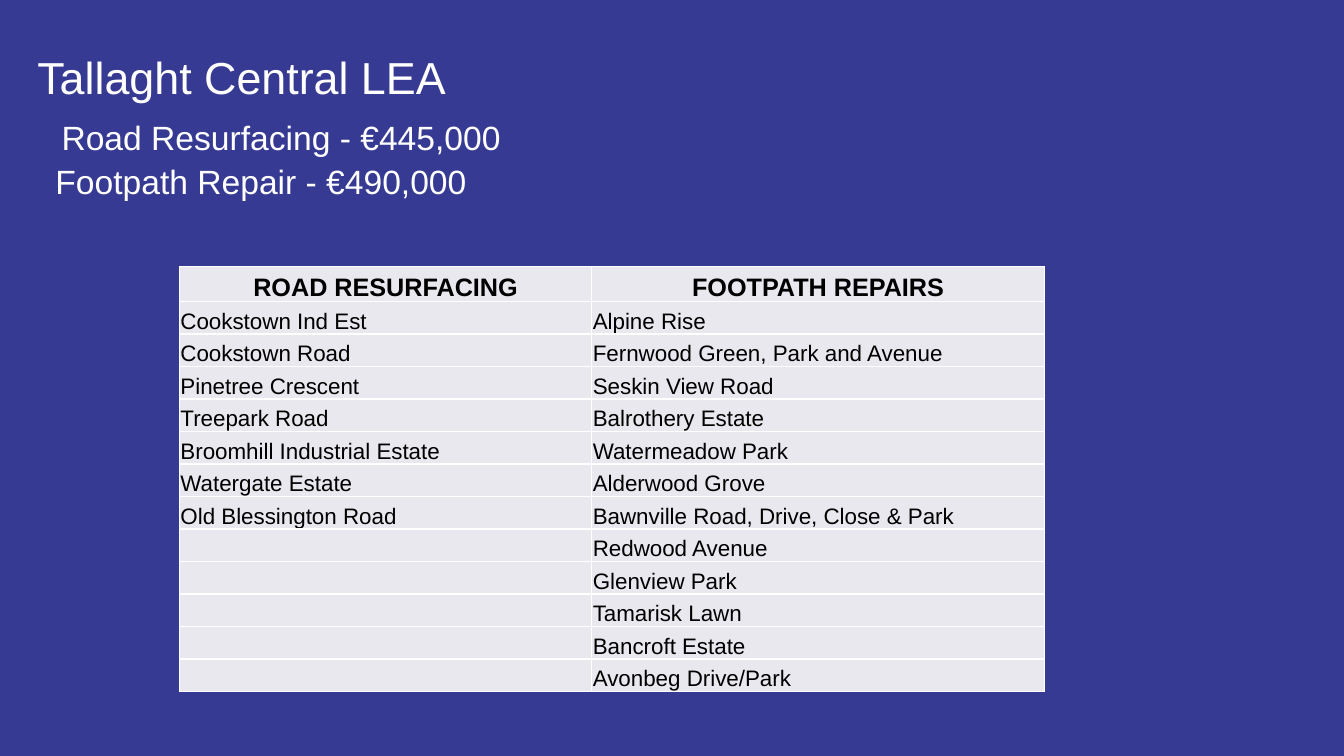
import pptx
import pptx.util
import pptx.dml.color
import pptx.enum.text
import pptx.oxml
from lxml import etree

Inches = pptx.util.Inches
Pt = pptx.util.Pt
Align = pptx.enum.text.PP_ALIGN
Anchor = pptx.enum.text.MSO_ANCHOR

HUES = {"back": "363A92", "white": "FFFFFF", "black": "000000", "cell": "E8E8EE"}


def hue(name):
    return pptx.dml.color.RGBColor.from_string(HUES[name])


def style(para, size, name, bold=False):
    para.font.name = "Arial"
    para.font.size = Pt(size)
    para.font.bold = bold
    para.font.color.rgb = hue(name)


deck = pptx.Presentation()
deck.slide_width = Inches(13.33)
deck.slide_height = Inches(7.5)
slide = deck.slides.add_slide(deck.slide_layouts[5])
slide.background.fill.solid()
slide.background.fill.fore_color.rgb = hue("back")

title = slide.shapes.title
title.left, title.top = Inches(0.37), Inches(0.44)
title.width, title.height = Inches(7.24), Inches(1.73)
frame = title.text_frame
frame.margin_left = frame.margin_right = frame.margin_bottom = 0
frame.margin_top = Inches(0.05)
frame.vertical_anchor = Anchor.TOP
frame.auto_size = pptx.enum.text.MSO_AUTO_SIZE.NONE
frame.word_wrap = True

lines = [
    ("Tallaght Central LEA", 32, 0, 0),
    ("Road Resurfacing - €445,000", 24, 0.24, 10),
    ("Footpath Repair - €490,000", 24, 0.18, 2.4),
]
frame.text = "\n".join(line[0] for line in lines)
for para, (text, size, indent, gap) in zip(frame.paragraphs, lines):
    props = para._p.get_or_add_pPr()
    props.set("marL", str(Inches(indent)))
    props.set("indent", "0")
    para.alignment = Align.LEFT
    para.line_spacing = 1.0
    para.space_before = Pt(gap)
    style(para, size, "white")

roads = [
    "ROAD RESURFACING", "Cookstown Ind Est", "Cookstown Road",
    "Pinetree Crescent", "Treepark Road", "Broomhill Industrial Estate",
    "Watergate Estate", "Old Blessington Road",
]
paths = [
    "FOOTPATH REPAIRS", "Alpine Rise", "Fernwood Green, Park and Avenue",
    "Seskin View Road", "Balrothery Estate", "Watermeadow Park",
    "Alderwood Grove", "Bawnville Road, Drive, Close & Park",
    "Redwood Avenue", "Glenview Park", "Tamarisk Lawn",
    "Bancroft Estate", "Avonbeg Drive/Park",
]
count = len(paths)
high, head = 4.22, 0.35
table = slide.shapes.add_table(
    count, 2, Inches(1.78), Inches(2.64), Inches(8.58), Inches(high)
).table
table.columns[0].width = Inches(4.09)
table.columns[1].width = Inches(4.49)
for row in range(count):
    table.rows[row].height = Inches(head if row == 0 else (high - head) / (count - 1))

for col, names in enumerate([roads, paths]):
    for row in range(count):
        cell = table.cell(row, col)
        cell.margin_left = cell.margin_right = cell.margin_top = Inches(0.01)
        cell.margin_bottom = 0
        cell.vertical_anchor = Anchor.BOTTOM
        para = cell.text_frame.paragraphs[0]
        if row < len(names):
            para.text = names[row]
        para.alignment = Align.CENTER if row == 0 else Align.LEFT
        style(para, 18 if row == 0 else 16, "black", row == 0)
        props = cell._tc.get_or_add_tcPr()
        for side in ["lnL", "lnR", "lnT", "lnB"]:
            edge = etree.SubElement(props, pptx.oxml.ns.qn("a:" + side), w=str(Pt(1)))
            fill = etree.SubElement(edge, pptx.oxml.ns.qn("a:solidFill"))
            etree.SubElement(fill, pptx.oxml.ns.qn("a:srgbClr"), val=HUES["white"])
        cell.fill.solid()
        cell.fill.fore_color.rgb = hue("cell")

deck.save("out.pptx")
